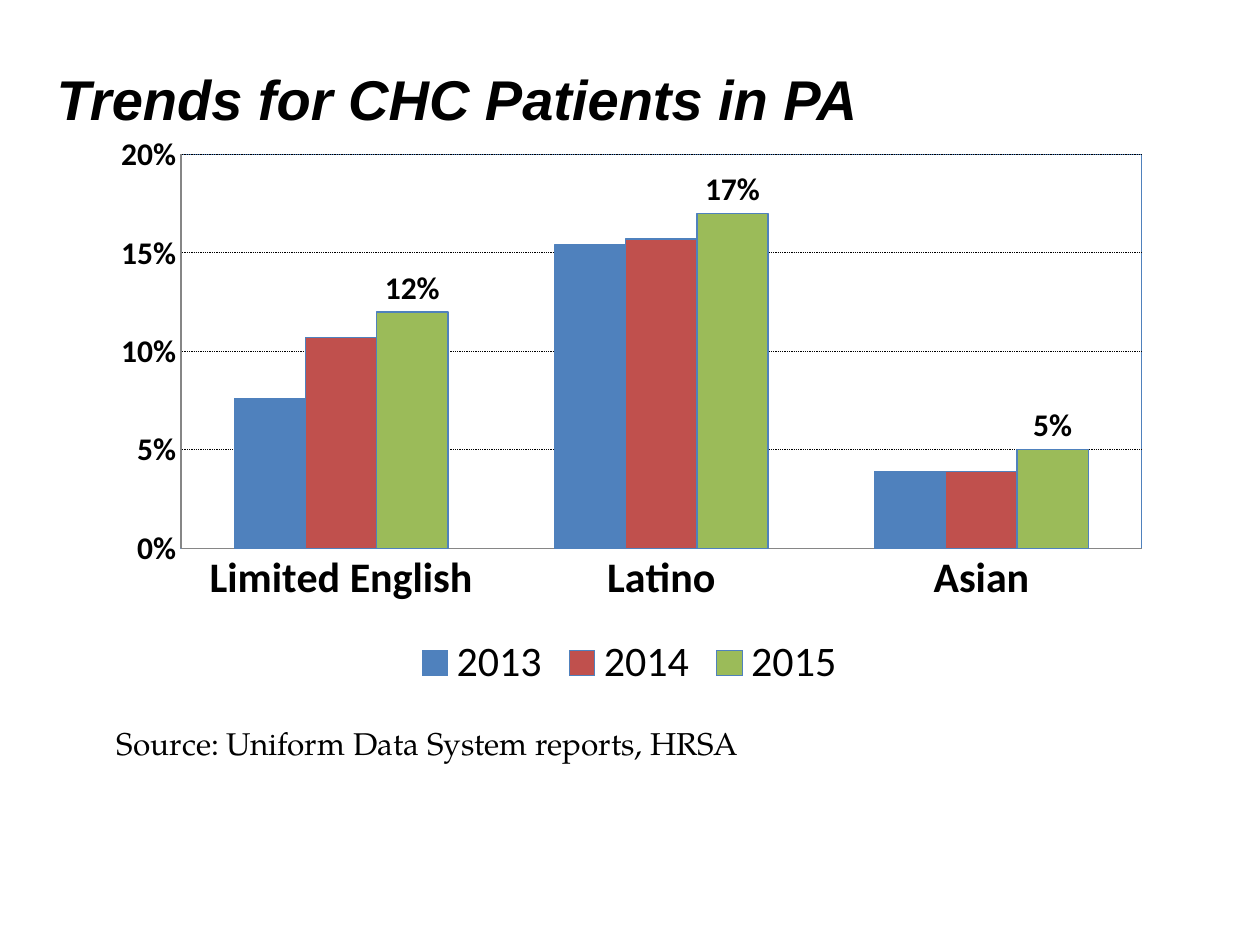
from dataclasses import dataclass

from lxml import etree
from pptx import Presentation
from pptx.chart.data import CategoryChartData
from pptx.dml.color import RGBColor
from pptx.enum.chart import (XL_CHART_TYPE, XL_LABEL_POSITION,
                             XL_LEGEND_POSITION, XL_TICK_MARK)
from pptx.enum.dml import MSO_LINE
from pptx.enum.text import MSO_ANCHOR, MSO_AUTO_SIZE, PP_ALIGN
from pptx.oxml import parse_xml
from pptx.util import Inches, Pt

COLUMN = XL_CHART_TYPE.COLUMN_CLUSTERED
ABOVE = XL_LABEL_POSITION.OUTSIDE_END
BOTTOM = XL_LEGEND_POSITION.BOTTOM
NO_TICK = XL_TICK_MARK.NONE
DOTS = MSO_LINE.ROUND_DOT
LEFT = PP_ALIGN.LEFT
TOP = MSO_ANCHOR.TOP
GROW = MSO_AUTO_SIZE.SHAPE_TO_FIT_TEXT
C_NS = "http://schemas.openxmlformats.org/drawingml/2006/chart"
A_NS = "http://schemas.openxmlformats.org/drawingml/2006/main"


@dataclass(frozen=True)
class Theme:
    ink: str = "000000"
    edge: str = "4F81BD"
    axis: str = "868686"
    bars: tuple = ("4F81BD", "C0504D", "9BBB59")
    head: str = "Arial"
    body: str = "Calibri"
    note: str = "TeX Gyre Pagella"
    title: int = 32
    large: int = 24
    small: int = 18


GROUPS = ("Limited English", "Latino", "Asian")
YEARS = {
    "2013": (0.076, 0.154, 0.039),
    "2014": (0.107, 0.157, 0.039),
    "2015": (0.12, 0.17, 0.05),
}


def style(font, name, size, color, bold=False, italic=False):
    font.name, font.size = name, Pt(size)
    font.bold, font.italic = bold, italic
    font.color.rgb = RGBColor.from_string(color)


def write(frame, text, **form):
    para = frame.paragraphs[0]
    para.alignment = LEFT
    run = para.add_run()
    run.text = text
    style(run.font, **form)


def stroke(line, color, width=0.75):
    line.color.rgb = RGBColor.from_string(color)
    line.width = Pt(width)


def frame_plot(chart, box, color):
    """Fix the inner plot at box (fractions of the chart) and outline it."""
    area = chart.element.find(f".//{{{C_NS}}}plotArea")
    for old in area.findall(f"{{{C_NS}}}layout"):
        area.remove(old)
    layout = etree.Element(f"{{{C_NS}}}layout")
    manual = etree.SubElement(layout, f"{{{C_NS}}}manualLayout")
    parts = [("layoutTarget", "inner"), ("xMode", "edge"), ("yMode", "edge")]
    for tag, val in parts + list(zip("xywh", box)):
        etree.SubElement(manual, f"{{{C_NS}}}{tag}", val=str(val))
    area.insert(0, layout)
    area.append(parse_xml(
        f'<c:spPr xmlns:c="{C_NS}" xmlns:a="{A_NS}"><a:noFill/>'
        f'<a:ln w="{Pt(0.75)}"><a:solidFill><a:srgbClr val="{color}"/>'
        '</a:solidFill></a:ln></c:spPr>'))


class Deck:
    """Holds the theme and the current slide."""

    def __init__(self, theme):
        self.theme = theme
        self.show = Presentation()
        self.show.slide_width = Inches(10)
        self.show.slide_height = Inches(7.5)
        self.slide = self.show.slides.add_slide(self.show.slide_layouts[5])

    def title(self, text, x, y, w, h):
        shape = self.slide.shapes.title
        shape.left, shape.top = Inches(x), Inches(y)
        shape.width, shape.height = Inches(w), Inches(h)
        frame = shape.text_frame
        frame.vertical_anchor = TOP
        frame.margin_top = Inches(0.1)
        write(frame, text, name=self.theme.head, size=self.theme.title,
              color=self.theme.ink, bold=True, italic=True)

    def note(self, text, x, y, w, h):
        box = self.slide.shapes.add_textbox(
            Inches(x), Inches(y), Inches(w), Inches(h))
        frame = box.text_frame
        frame.word_wrap = False
        frame.auto_size = GROW
        write(frame, text, name=self.theme.note, size=self.theme.small,
              color=self.theme.ink)

    def columns(self, groups, rows, x, y, w, h):
        look = self.theme
        data = CategoryChartData(number_format="0%")
        data.categories = groups
        for name, vals in rows.items():
            data.add_series(name, vals)
        chart = self.slide.shapes.add_chart(
            COLUMN, Inches(x), Inches(y), Inches(w), Inches(h), data).chart
        style(chart.font, look.body, look.small, look.ink)
        chart.has_title = False
        chart.has_legend = True
        chart.legend.position = BOTTOM
        chart.legend.include_in_layout = False
        style(chart.legend.font, look.body, look.large, look.ink)

        plot = chart.plots[0]
        plot.gap_width, plot.overlap = 150, 0
        plot.vary_by_categories = False
        for bar, color in zip(plot.series, look.bars):
            bar.format.fill.solid()
            bar.format.fill.fore_color.rgb = RGBColor.from_string(color)
            stroke(bar.format.line, look.edge)
        tags = plot.series[-1].data_labels
        tags.show_value = True
        tags.number_format, tags.number_format_is_linked = "0%", False
        tags.position = ABOVE
        style(tags.font, look.body, look.small, look.ink, bold=True)

        scale = chart.value_axis
        for axis, size in ((chart.category_axis, look.large),
                           (scale, look.small)):
            axis.major_tick_mark = axis.minor_tick_mark = NO_TICK
            stroke(axis.format.line, look.axis)
            style(axis.tick_labels.font, look.body, size, look.ink, bold=True)
        scale.minimum_scale, scale.maximum_scale = 0, 0.2
        scale.major_unit = 0.05
        scale.tick_labels.number_format = "0%"
        scale.tick_labels.number_format_is_linked = False
        scale.has_major_gridlines = True
        grid = scale.major_gridlines.format.line
        stroke(grid, look.ink, 0.5)
        grid.dash_style = DOTS
        frame_plot(chart, (0.08, 0.05, 0.9, 0.69), look.edge)


def main():
    deck = Deck(Theme())
    deck.columns(GROUPS, YEARS, 0.76, 1, 8.47, 4.53)
    deck.title("Trends for CHC Patients in PA", 0.35, 0.41, 9.34, 0.87)
    deck.note("Source: Uniform Data System reports, HRSA",
              0.83, 5.7, 5.21, 0.4)
    deck.show.save("out.pptx")


if __name__ == "__main__":
    main()
